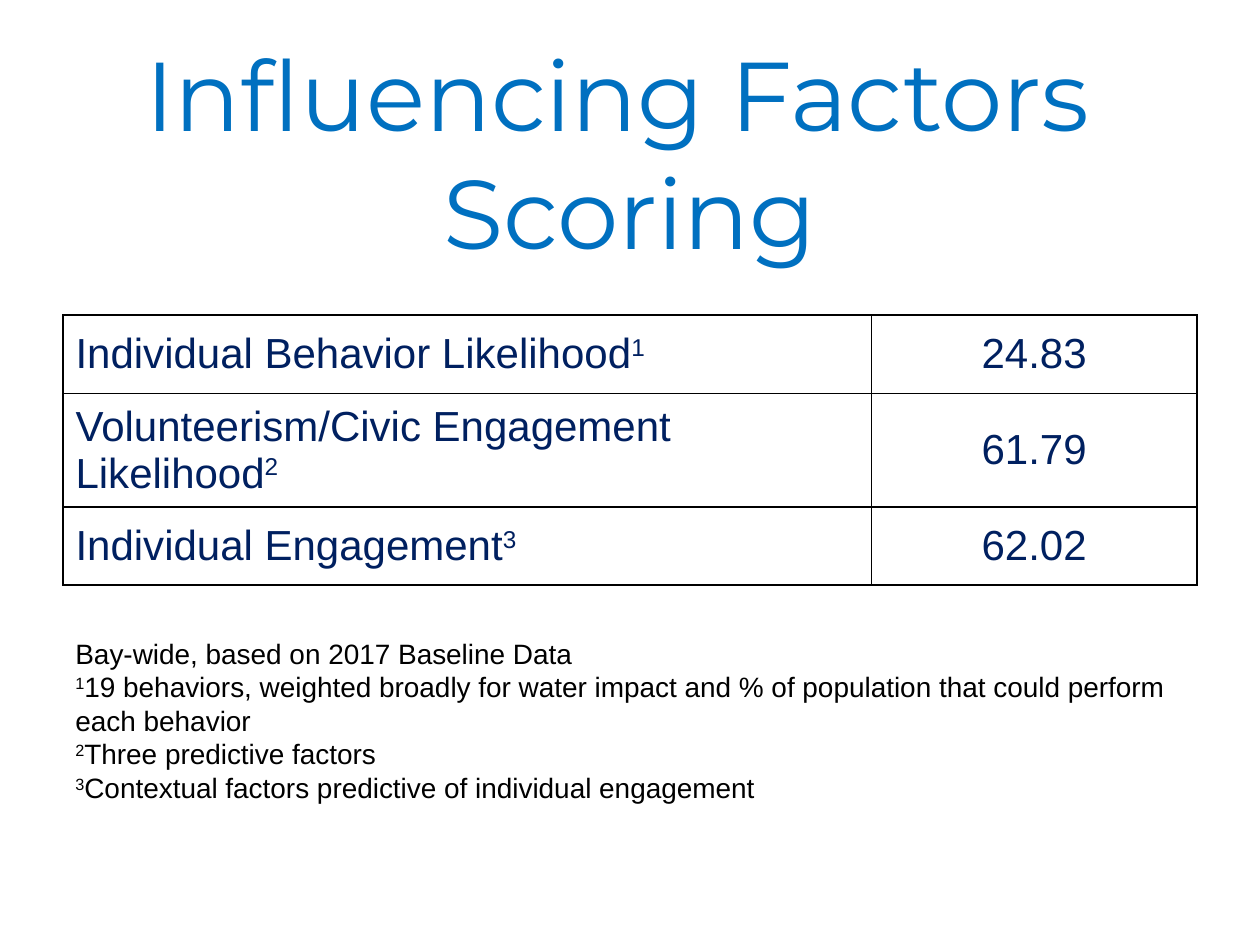
from dataclasses import dataclass

from lxml.etree import SubElement
from pptx import Presentation
from pptx.dml.color import RGBColor
from pptx.enum.text import MSO_ANCHOR, PP_ALIGN
from pptx.oxml.ns import qn
from pptx.util import Pt


@dataclass(frozen=True)
class Theme:
    head: str = "Montserrat"
    body: str = "Arial"
    blue: str = "0070C0"
    navy: str = "002060"
    black: str = "000000"
    title: float = 55.8
    cell: float = 24
    note: float = 16
    line: float = 1


THEME = Theme()

TITLE = ["Influencing Factors ", "Scoring"]
SCORES = [
    ("Individual Behavior Likelihood", "1", "24.83"),
    ("Volunteerism/Civic Engagement Likelihood", "2", "61.79"),
    ("Individual Engagement", "3", "62.02"),
]
NOTES = [
    ("", "Bay-wide, based on 2017 Baseline Data"),
    ("1", "19 behaviors, weighted broadly for water impact and % of "
          "population that could perform each behavior"),
    ("2", "Three predictive factors"),
    ("3", "Contextual factors predictive of individual engagement"),
]


def style(para, face, size, color, align=PP_ALIGN.LEFT):
    para.alignment = align
    font = para.font
    font.name, font.size = face, Pt(size)
    font.color.rgb = RGBColor.from_string(color)


def add_run(para, text, raised=False):
    run = para.add_run()
    run.text = text
    if raised:
        run.font._element.set("baseline", "30000")


def add_box(slide, left, top, width, height, count):
    """Add a wrapping text box and return its paragraphs."""
    box = slide.shapes.add_textbox(Pt(left), Pt(top), Pt(width), Pt(height))
    frame = box.text_frame
    frame.word_wrap = True
    for _ in range(count - 1):
        frame.add_paragraph()
    return frame.paragraphs


def add_title(slide):
    paras = add_box(slide, 54, 16, 612, 162, len(TITLE))
    for para, text in zip(paras, TITLE):
        style(para, THEME.head, THEME.title, THEME.blue, PP_ALIGN.CENTER)
        add_run(para, text)


def set_cell(cell):
    """Clear the fill, centre the text vertically and draw the borders."""
    cell.vertical_anchor = MSO_ANCHOR.MIDDLE
    props = cell._tc.get_or_add_tcPr()
    for side in ("a:lnL", "a:lnR", "a:lnT", "a:lnB"):
        line = SubElement(props, qn(side), w=str(Pt(THEME.line)))
        fill = SubElement(line, qn("a:solidFill"))
        SubElement(fill, qn("a:srgbClr"), val=THEME.black)
    cell.fill.background()


def add_scores(slide):
    frame = slide.shapes.add_table(
        len(SCORES), 2, Pt(36), Pt(180), Pt(648), Pt(134.4))
    table = frame.table
    table.first_row = table.horz_banding = False
    for col, width in zip(table.columns, (462, 186)):
        col.width = Pt(width)
    for row, (name, mark, score) in zip(table.rows, SCORES):
        row.height = Pt(44.8)
        label, value = row.cells
        for cell, align in ((label, PP_ALIGN.LEFT), (value, PP_ALIGN.CENTER)):
            set_cell(cell)
            style(cell.text_frame.paragraphs[0], THEME.body, THEME.cell,
                  THEME.navy, align)
        para = label.text_frame.paragraphs[0]
        add_run(para, name)
        add_run(para, mark, raised=True)
        add_run(value.text_frame.paragraphs[0], score)


def add_notes(slide):
    paras = add_box(slide, 36, 360, 660, 104.4, len(NOTES))
    for para, (mark, text) in zip(paras, NOTES):
        style(para, THEME.body, THEME.note, THEME.black)
        if mark:
            add_run(para, mark, raised=True)
        add_run(para, text)


def main():
    deck = Presentation()
    deck.slide_width, deck.slide_height = Pt(720), Pt(540)
    slide = deck.slides.add_slide(deck.slide_layouts[6])
    add_title(slide)
    add_scores(slide)
    add_notes(slide)
    deck.save("out.pptx")


if __name__ == "__main__":
    main()
